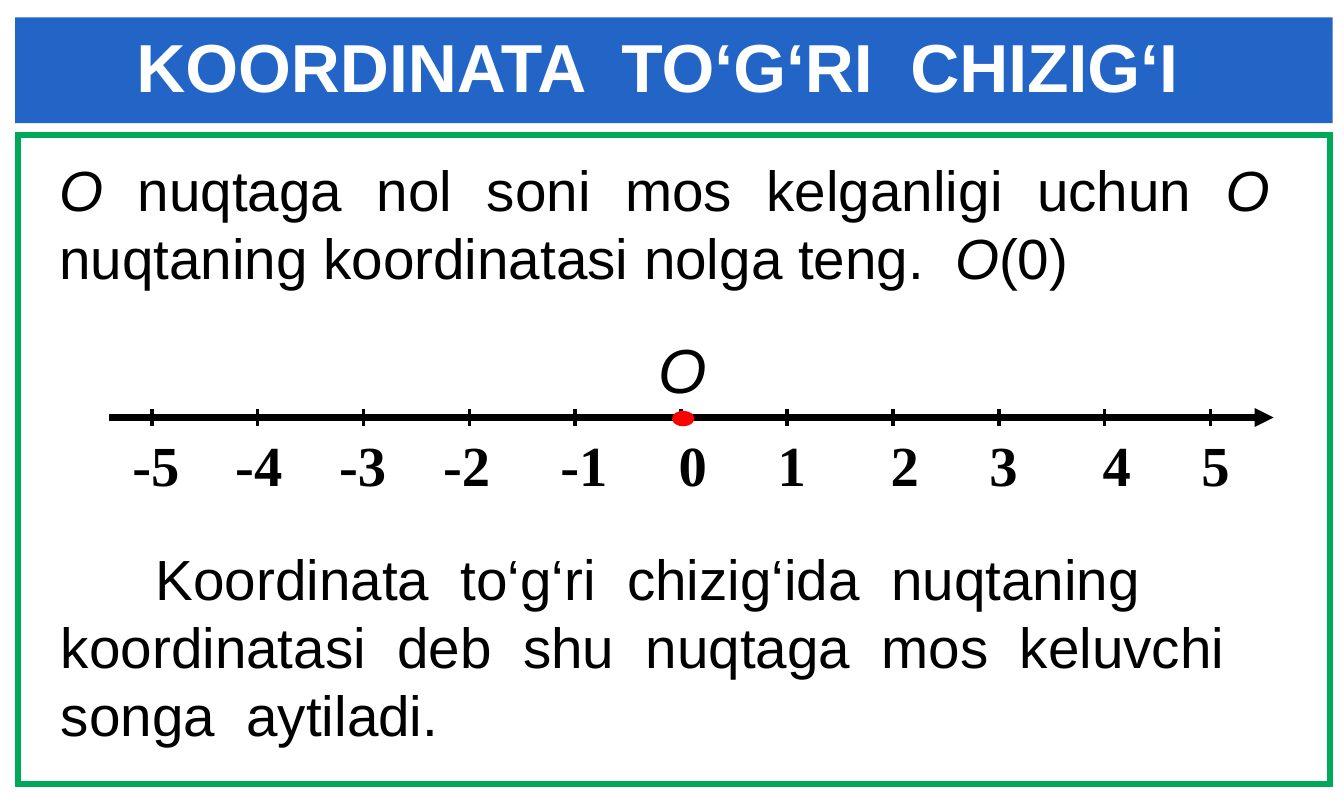
from dataclasses import dataclass

from lxml import etree
from pptx import Presentation
from pptx.dml.color import RGBColor
from pptx.enum import shapes, text
from pptx.oxml.ns import qn
from pptx.util import Inches, Pt


@dataclass(frozen=True)
class Theme:
    blue: RGBColor = RGBColor(0x23, 0x65, 0xC7)
    green: RGBColor = RGBColor(0x00, 0xA8, 0x59)
    red: RGBColor = RGBColor(0xFF, 0x00, 0x00)
    black: RGBColor = RGBColor(0x00, 0x00, 0x00)
    white: RGBColor = RGBColor(0xFF, 0xFF, 0xFF)
    sans: str = "Arial"
    serif: str = "Times New Roman"
    title: int = 48
    point: int = 44
    body: int = 40


THEME = Theme()
# Centre of each number, measured from the left end of the axis
NUMBERS = {
    "-5": 0.46, "-4": 1.47, "-3": 2.49, "-2": 3.51, "-1": 4.66, "0": 5.73,
    "1": 6.7, "2": 7.81, "3": 8.78, "4": 9.89, "5": 10.86,
}
TICK_STEP = 10.39 / (len(NUMBERS) - 1)


def add_shape(page, kind, left, top, width, height, fill=None, line=None, weight=0.75):
    shape = page.shapes.add_shape(
        kind, Inches(left), Inches(top), Inches(width), Inches(height))
    shape.shadow.inherit = False
    for part, colour in ((shape.fill, fill), (shape.line.fill, line)):
        if colour is None:
            part.background()
        else:
            part.solid()
            part.fore_color.rgb = colour
    if line is not None:
        shape.line.width = Pt(weight)
    return shape


def add_text(page, left, top, width, height, spans, size, colour=THEME.black,
             font=THEME.sans, bold=False, margin=None):
    """Place one paragraph; spans are (wording, italic) pairs."""
    box = page.shapes.add_textbox(
        Inches(left), Inches(top), Inches(width), Inches(height))
    frame = box.text_frame
    frame.word_wrap = True
    if margin is not None:
        frame.margin_left = frame.margin_right = Inches(margin)
        frame.margin_top = frame.margin_bottom = Inches(margin)
    para = frame.paragraphs[0]
    para.font.size, para.font.name = Pt(size), font
    para.font.bold, para.font.color.rgb = bold, colour
    for wording, italic in spans:
        span = para.add_run()
        span.text = wording
        span.font.italic = italic
    return para


def add_line(page, start, end, weight, arrow=False):
    line = page.shapes.add_connector(
        shapes.MSO_CONNECTOR.STRAIGHT, *(Inches(n) for n in (*start, *end)))
    line.line.color.rgb = THEME.black
    line.line.width = Pt(weight)
    if arrow:
        etree.SubElement(line._element.spPr.find(qn("a:ln")), qn("a:tailEnd"),
                         type="triangle")
    etree.SubElement(line._element.spPr, qn("a:effectLst"))


def draw_title(page, left, top, width, height):
    add_shape(page, shapes.MSO_SHAPE.RECTANGLE, left, top, width, height, THEME.blue)
    add_text(page, left + 1.09, top + 0.02, width - 1.09, 0.91,
             [("KOORDINATA  TO‘G‘RI  CHIZIG‘I", False)],
             THEME.title, THEME.white, bold=True)


def draw_frame(page, left, top, width, height):
    band = 0.06
    frame = add_shape(page, shapes.MSO_SHAPE.RECTANGLE, left + band / 2, top + band / 2,
                      width - band, height - band, line=THEME.green, weight=band * 72)
    # Square corners
    etree.SubElement(frame._element.spPr.find(qn("a:ln")), qn("a:miter"), lim="800000")


def draw_origin_text(page, left, top, width, height):
    para = add_text(page, left, top, width, height, [
        ("O ", True), ("nuqtaga nol soni mos kelganligi uchun ", False),
        ("O ", True), ("nuqtaning koordinatasi nolga teng.  ", False),
        ("O", True), ("(0)", False)], THEME.body, margin=0)
    para.alignment = text.PP_ALIGN.JUSTIFY


def draw_definition(page, left, top, width, height):
    para = add_text(page, left, top, width, height, [(
        "Koordinata  to‘g‘ri  chizig‘ida  nuqtaning  koordinatasi  deb  shu  "
        "nuqtaga  mos  keluvchi  songa  aytiladi.", False)], THEME.body)
    para._p.get_or_add_pPr().set("indent", str(Inches(0.93)))


def draw_number_line(page, left, top, width):
    """Draw the axis at height top, with its ticks, numbers and origin."""
    # Numbers, centred on tab stops
    para = add_text(page, left, top + 0.12, width, 0.65,
                    [("".join("\t" + number for number in NUMBERS), False)],
                    THEME.body, font=THEME.serif, bold=True, margin=0)
    stops = etree.Element(qn("a:tabLst"))
    for centre in NUMBERS.values():
        etree.SubElement(stops, qn("a:tab"), pos=str(Inches(centre)), algn="ctr")
    para._p.get_or_add_pPr().insert(0, stops)

    # Axis and ticks
    add_line(page, (left, top), (left + width, top), 4.5, arrow=True)
    for index in range(len(NUMBERS)):
        tick = left + 0.42 + index * TICK_STEP
        add_line(page, (tick, top - 0.08), (tick, top + 0.08), 2.5)

    # Origin
    add_shape(page, shapes.MSO_SHAPE.OVAL, left + 5.53, top - 0.06, 0.21, 0.14,
              THEME.red, THEME.red)
    add_text(page, left + 5.29, top - 0.9, 0.6, 0.84, [("O", True)], THEME.point)


def main():
    deck = Presentation()
    deck.slide_width, deck.slide_height = Inches(13.19), Inches(7.875)
    page = deck.slides.add_slide(deck.slide_layouts[6])
    draw_frame(page, 0.15, 1.3, 12.93, 6.43)
    draw_title(page, 0.15, 0.17, 12.93, 1.04)
    draw_origin_text(page, 0.58, 1.52, 11.88, 1.35)
    draw_definition(page, 0.5, 5.29, 12.19, 2.12)
    draw_number_line(page, 1.07, 4.1, 11.43)
    deck.save("out.pptx")


if __name__ == "__main__":
    main()
